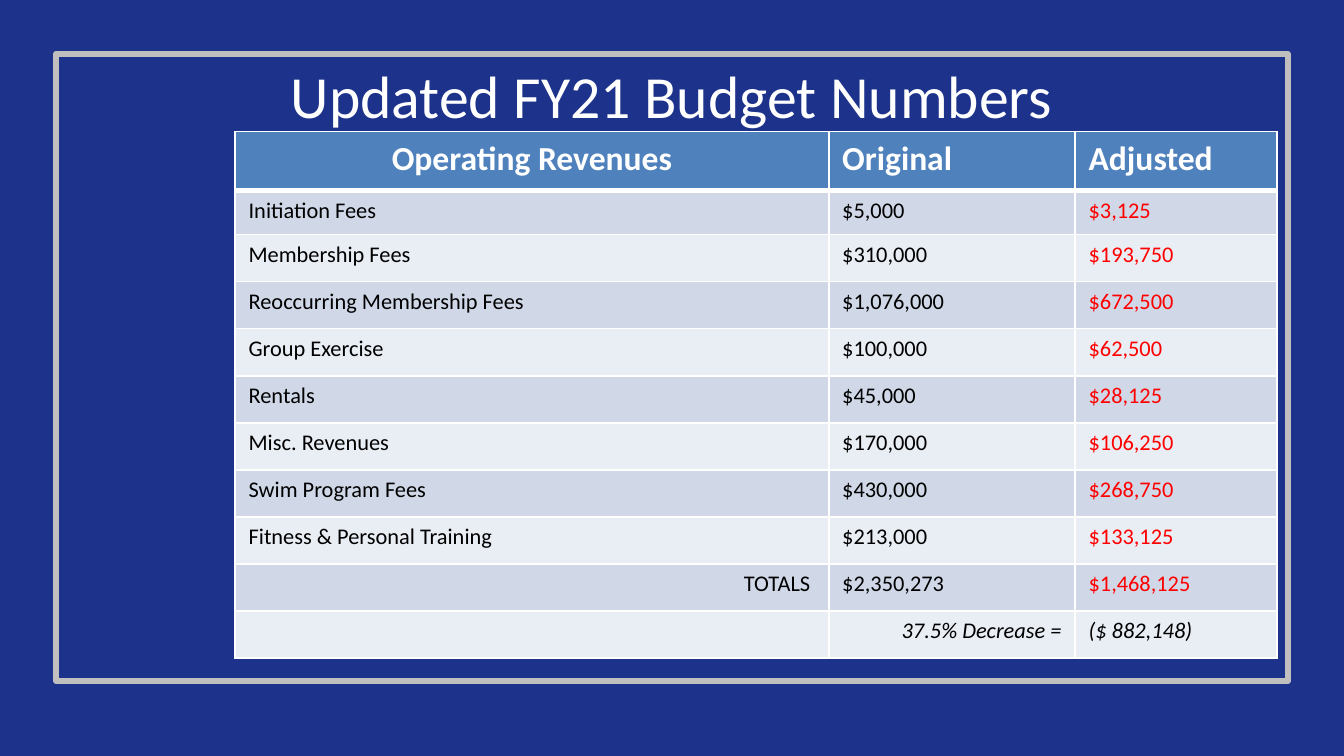
from dataclasses import dataclass

from lxml import etree
from pptx import Presentation
from pptx.dml.color import RGBColor
from pptx.enum.shapes import MSO_SHAPE
from pptx.enum.text import MSO_ANCHOR, PP_ALIGN
from pptx.oxml.ns import qn
from pptx.util import Pt

RECT = MSO_SHAPE.RECTANGLE
MIDDLE = MSO_ANCHOR.MIDDLE
LEFT, CENTER, RIGHT = PP_ALIGN.LEFT, PP_ALIGN.CENTER, PP_ALIGN.RIGHT


@dataclass(frozen=True)
class Theme:
    font: str = "Calibri"
    back: str = "1D328B"
    frame: str = "BFBFBF"
    white: str = "FFFFFF"
    black: str = "000000"
    red: str = "FF0000"
    head: str = "4F81BD"
    bands: tuple = ("D0D8E8", "E9EDF4")
    title: int = 32
    label: int = 18
    body: int = 12


@dataclass(frozen=True)
class Entry:
    text: str
    color: str
    align: PP_ALIGN = LEFT
    size: int = 12
    bold: bool = False
    italic: bool = False


THEME = Theme()
COLS = (318, 132, 108)
ROWS = (31.7, 23.6) + (25.2,) * 9
FEES = (
    ("Initiation Fees", "$5,000", "$3,125"),
    ("Membership Fees", "$310,000", "$193,750"),
    ("Reoccurring Membership Fees", "$1,076,000", "$672,500"),
    ("Group Exercise", "$100,000", "$62,500"),
    ("Rentals", "$45,000", "$28,125"),
    ("Misc. Revenues", "$170,000", "$106,250"),
    ("Swim Program Fees", "$430,000", "$268,750"),
    ("Fitness & Personal Training", "$213,000", "$133,125"),
    ("TOTALS ", "$2,350,273", "$1,468,125"),
)


def rgb(color: str) -> RGBColor:
    return RGBColor.from_string(color)


def style(para, item: Entry) -> None:
    para.text = item.text
    para.alignment = item.align
    font = para.font
    font.name, font.size = THEME.font, Pt(item.size)
    font.bold, font.italic = item.bold, item.italic
    font.color.rgb = rgb(item.color)
    if not item.text:  # keeps an empty row from growing
        etree.SubElement(para._p, qn("a:endParaRPr"), sz=str(item.size * 100))


def edge(cell, side: str, width: float) -> None:
    line = etree.SubElement(cell._tc.get_or_add_tcPr(), qn(f"a:ln{side}"),
                            w=str(Pt(width)))
    fill = etree.SubElement(line, qn("a:solidFill"))
    etree.SubElement(fill, qn("a:srgbClr"), val=THEME.white)


def draw_cell(cell, item: Entry, fill: str, top: float, base: float) -> None:
    for side, width in (("L", 1), ("R", 1), ("T", top), ("B", base)):
        edge(cell, side, width)
    cell.fill.solid()
    cell.fill.fore_color.rgb = rgb(fill)
    style(cell.text_frame.paragraphs[0], item)


def entries() -> list[list[Entry]]:
    heads = ("Operating Revenues", "Original", "Adjusted")
    grid = [[Entry(text, THEME.white, LEFT if col else CENTER,
                   THEME.label, bold=True) for col, text in enumerate(heads)]]
    for name, old, new in FEES:
        align = RIGHT if name == FEES[-1][0] else LEFT
        grid.append([Entry(name, THEME.black, align, THEME.body),
                     Entry(old, THEME.black, size=THEME.body),
                     Entry(new, THEME.red, size=THEME.body)])
    last = (("", LEFT), ("37.5% Decrease =", RIGHT), ("($ 882,148)", LEFT))
    grid.append([Entry(text, THEME.black, align, THEME.body, italic=True)
                 for text, align in last])
    return grid


def draw_frame(slide) -> None:
    box = slide.shapes.add_shape(RECT, Pt(30), Pt(28.8), Pt(660), Pt(336))
    box.shadow.inherit = False
    box.fill.background()
    box.line.color.rgb = rgb(THEME.frame)
    box.line.width = Pt(3)
    etree.SubElement(box.line._get_or_add_ln(), qn("a:round"))
    slide.shapes._spTree.insert(2, box._element)  # behind the title


def draw_title(slide) -> None:
    title = slide.shapes.title
    title.left, title.top = Pt(36), Pt(16.6)
    title.width, title.height = Pt(648), Pt(67.7)
    title.text_frame.vertical_anchor = MIDDLE
    style(title.text_frame.paragraphs[0],
          Entry("Updated FY21 Budget Numbers", THEME.white, CENTER, THEME.title))


def draw_table(slide) -> None:
    table = slide.shapes.add_table(len(ROWS), len(COLS), Pt(126), Pt(70.4),
                                   Pt(sum(COLS)), Pt(sum(ROWS))).table
    for col, width in zip(table.columns, COLS):
        col.width = Pt(width)
    for row, height in zip(table.rows, ROWS):
        row.height = Pt(height)
    for r, line in enumerate(entries()):
        fill = THEME.bands[(r - 1) % 2] if r else THEME.head
        top, base = 3 if r == 1 else 1, 1 if r else 3
        for c, item in enumerate(line):
            draw_cell(table.cell(r, c), item, fill, top, base)


def main() -> None:
    deck = Presentation()
    deck.slide_width, deck.slide_height = Pt(720), Pt(405)
    slide = deck.slides.add_slide(deck.slide_layouts[5])
    slide.background.fill.solid()
    slide.background.fill.fore_color.rgb = rgb(THEME.back)
    draw_frame(slide)
    draw_title(slide)
    draw_table(slide)
    deck.save("out.pptx")


if __name__ == "__main__":
    main()
